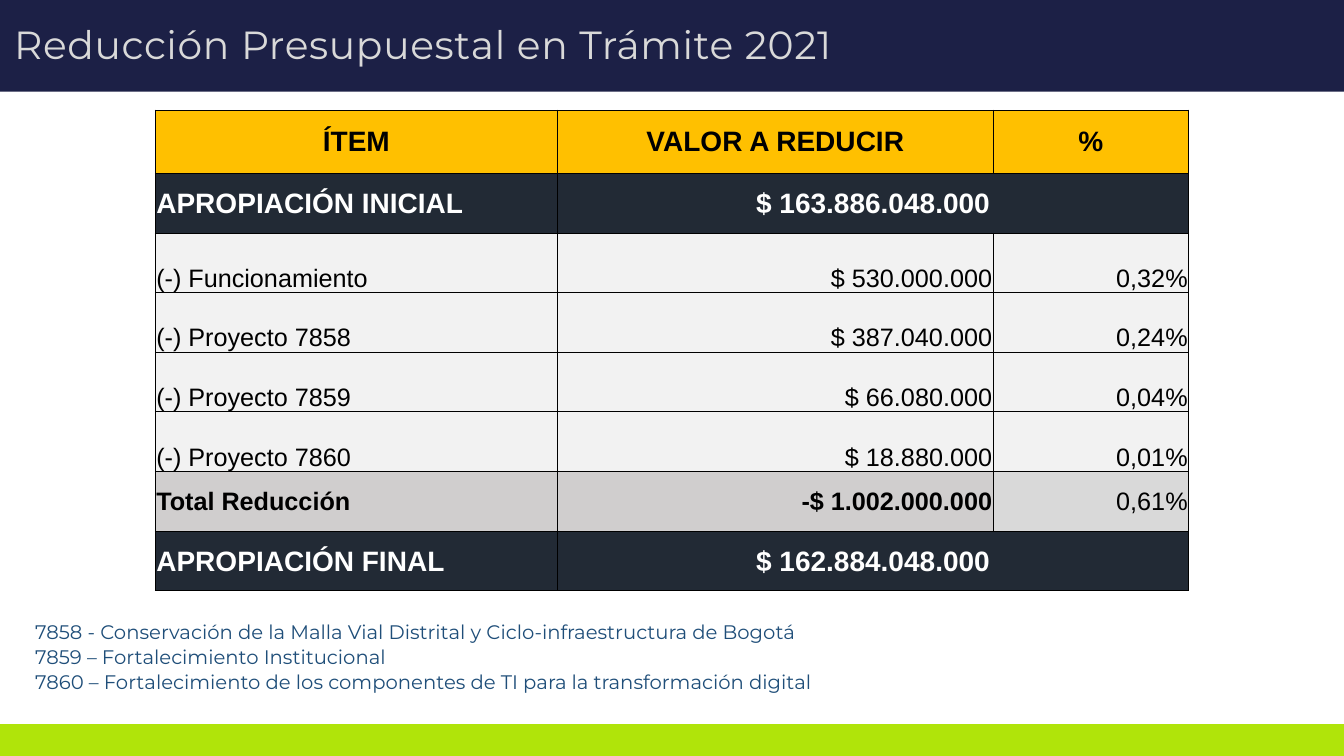
from lxml import etree
from pptx import Presentation
from pptx.dml.color import RGBColor
from pptx.enum.shapes import MSO_SHAPE
from pptx.enum.text import MSO_ANCHOR, MSO_AUTO_SIZE, PP_ALIGN
from pptx.oxml.ns import qn
from pptx.util import Inches, Pt

RECTANGLE = MSO_SHAPE.RECTANGLE
TOP, MIDDLE, BOTTOM = MSO_ANCHOR.TOP, MSO_ANCHOR.MIDDLE, MSO_ANCHOR.BOTTOM
LEFT, CENTER, RIGHT = PP_ALIGN.LEFT, PP_ALIGN.CENTER, PP_ALIGN.RIGHT
GROW = MSO_AUTO_SIZE.SHAPE_TO_FIT_TEXT

NAVY = RGBColor(0x1C, 0x20, 0x46)
LIME = RGBColor(0xB0, 0xE4, 0x0A)
AMBER = RGBColor(0xFF, 0xC0, 0x00)
SLATE = RGBColor(0x22, 0x2A, 0x35)
PALE = RGBColor(0xF2, 0xF2, 0xF2)
WARM_GRAY = RGBColor(0xD0, 0xCE, 0xCE)
GRAY = RGBColor(0xD9, 0xD9, 0xD9)
BLUE = RGBColor(0x1F, 0x4E, 0x79)
BLACK = RGBColor(0, 0, 0)
WHITE = RGBColor(0xFF, 0xFF, 0xFF)

COLUMN_WIDTHS = (3.99, 4.32, 1.94)
HEADER_HEIGHT = 0.63
TABLE_HEIGHT = 4.77
ROWS = (
    ("header", ("ÍTEM", "VALOR A REDUCIR", "%")),
    ("balance", ("APROPIACIÓN INICIAL", "$ 163.886.048.000")),
    ("detail", ("(-) Funcionamiento", "$ 530.000.000", "0,32%")),
    ("detail", ("(-) Proyecto 7858", "$ 387.040.000", "0,24%")),
    ("detail", ("(-) Proyecto 7859", "$ 66.080.000", "0,04%")),
    ("detail", ("(-) Proyecto 7860", "$ 18.880.000", "0,01%")),
    ("total", ("Total Reducción", "-$ 1.002.000.000", "0,61%")),
    ("balance", ("APROPIACIÓN FINAL", "$ 162.884.048.000")),
)
ROW_STYLES = {
    "header": dict(fills=(AMBER,) * 3, color=BLACK, size=20, bold=(True,) * 3,
                   align=(CENTER,) * 3, anchor=MIDDLE),
    "balance": dict(fills=(SLATE,) * 3, color=WHITE, size=20, bold=(True,) * 3,
                    align=(LEFT, CENTER, CENTER), anchor=MIDDLE),
    "detail": dict(fills=(PALE,) * 3, color=BLACK, size=18, bold=(False,) * 3,
                   align=(LEFT, RIGHT, RIGHT), anchor=BOTTOM),
    "total": dict(fills=(WARM_GRAY, WARM_GRAY, GRAY), color=BLACK, size=18,
                  bold=(True, True, False), align=(LEFT, RIGHT, RIGHT), anchor=MIDDLE),
}
PROJECTS = (
    "7858 - Conservación de la Malla Vial Distrital y Ciclo-infraestructura de Bogotá",
    "7859 – Fortalecimiento Institucional",
    "7860 – Fortalecimiento de los componentes de TI para la transformación digital",
)


class BudgetSlide:
    """Draws the elements of the budget reduction slide in one style."""

    heading_font = "Montserrat"
    table_font = "Arial"

    def __init__(self, page):
        self.shapes = page.shapes

    def band(self, top, height, color, outlined=False):
        band = self.shapes.add_shape(RECTANGLE, 0, Inches(top), Inches(13.33), Inches(height))
        band.shadow.inherit = False
        band.fill.solid()
        band.fill.fore_color.rgb = color
        if outlined:
            band.line.color.rgb = color
            band.line.width = Pt(1)
        else:
            band.line.fill.background()

    def text(self, place, lines, size, color, anchor=TOP, margins=None, line_spacing=None, tracking=None):
        box = self.shapes.add_textbox(*(Inches(length) for length in place))
        frame = box.text_frame
        frame.word_wrap = True
        frame.auto_size = GROW
        frame.vertical_anchor = anchor
        if margins:
            self.set_margins(frame, margins)
        frame.text = "\n".join(lines)
        for index, paragraph in enumerate(frame.paragraphs):
            properties = paragraph._p.get_or_add_pPr()
            properties.set("marL", str(Inches(0.01)))
            if index:
                paragraph.space_before = Pt(0.9)
            if line_spacing:
                paragraph.line_spacing = line_spacing
            for span in paragraph.runs:
                self.format_span(span, self.heading_font, size, color)
                if tracking:
                    span.font._element.set("spc", str(int(tracking * 100)))

    def table(self, left, top):
        width = sum(COLUMN_WIDTHS)
        frame = self.shapes.add_table(len(ROWS), len(COLUMN_WIDTHS), Inches(left), Inches(top),
                                      Inches(width), Inches(TABLE_HEIGHT))
        table = frame.table
        for column, column_width in zip(table.columns, COLUMN_WIDTHS):
            column.width = Inches(column_width)
        body_height = (TABLE_HEIGHT - HEADER_HEIGHT) / (len(ROWS) - 1)
        for row_index, (kind, values) in enumerate(ROWS):
            row = table.rows[row_index]
            row.height = Inches(body_height if row_index else HEADER_HEIGHT)
            for column_index, cell in enumerate(row.cells):
                value = values[column_index] if column_index < len(values) else ""
                self.cell(cell, value, column_index, ROW_STYLES[kind])
            if len(values) < len(COLUMN_WIDTHS):
                table.cell(row_index, 1).merge(table.cell(row_index, 2))

    def cell(self, cell, value, column_index, style):
        self.border(cell)
        cell.fill.solid()
        cell.fill.fore_color.rgb = style["fills"][column_index]
        cell.vertical_anchor = style["anchor"]
        self.set_margins(cell, (0.01, 0.01, 0.01, 0))
        cell.text_frame.text = value
        paragraph = cell.text_frame.paragraphs[0]
        paragraph.alignment = style["align"][column_index]
        for span in paragraph.runs:
            self.format_span(span, self.table_font, style["size"], style["color"])
            span.font.bold = style["bold"][column_index]

    def border(self, cell):
        properties = cell._tc.get_or_add_tcPr()
        for side in ("a:lnL", "a:lnR", "a:lnT", "a:lnB"):
            line = etree.SubElement(properties, qn(side), w=str(Pt(0.5)))
            fill = etree.SubElement(line, qn("a:solidFill"))
            etree.SubElement(fill, qn("a:srgbClr"), val=str(BLACK))

    def set_margins(self, holder, margins):
        lengths = [Inches(margin) for margin in margins]
        holder.margin_left, holder.margin_top, holder.margin_right, holder.margin_bottom = lengths

    def format_span(self, span, font, size, color):
        span.font.name = font
        span.font.size = Pt(size)
        span.font.color.rgb = color


def main():
    deck = Presentation()
    deck.slide_width, deck.slide_height = Inches(13.33), Inches(7.5)
    slide = BudgetSlide(deck.slides.add_slide(deck.slide_layouts[6]))
    slide.band(7.19, 0.31, LIME, outlined=True)
    slide.band(0, 0.91, NAVY)
    slide.text((0.13, 0.24, 10.71, 0.44), ["Reducción Presupuestal en Trámite 2021"], 28, GRAY,
               anchor=MIDDLE, margins=(0, 0.01, 0, 0), line_spacing=0.9, tracking=0.5)
    slide.table(1.54, 1.09)
    slide.text((0.24, 6.1, 12.85, 1.09), PROJECTS, 14, BLUE)
    deck.save("out.pptx")


if __name__ == "__main__":
    main()
